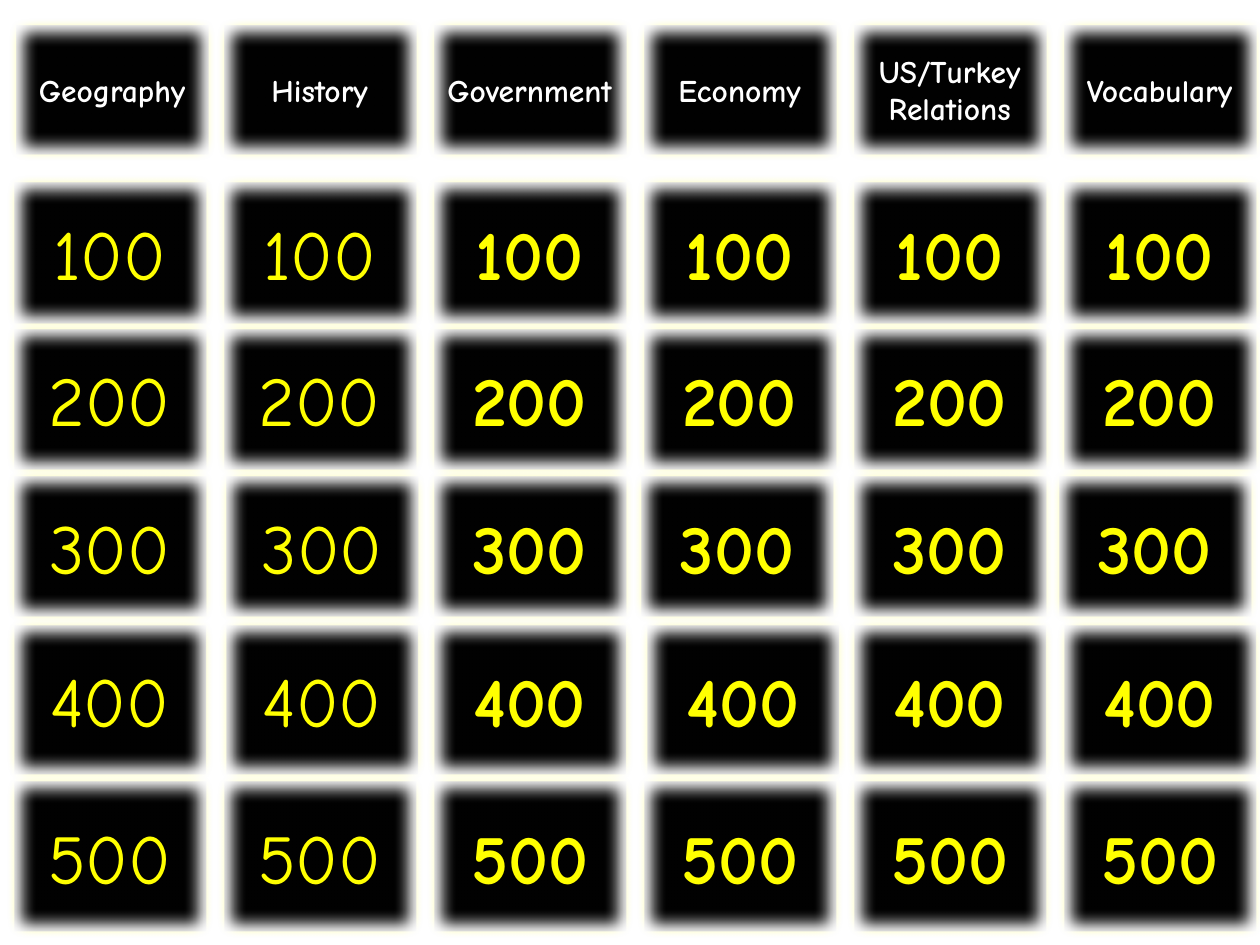
from lxml.etree import SubElement
from pptx import Presentation
from pptx.dml.color import RGBColor
from pptx.enum.shapes import MSO_SHAPE
from pptx.enum.text import MSO_ANCHOR, PP_ALIGN
from pptx.oxml.ns import qn
from pptx.util import Inches, Pt

BLACK, WHITE, YELLOW = "000000", "FFFFFF", "FFFF00"
FONT = "Comic Neue"
CATEGORIES = ["Geography", "History", "Government", "Economy",
              "US/Turkey\nRelations", "Vocabulary"]
LEFT, PITCH, TILE_WIDTH = 0.08, 5 / 3, 1.58
HEADER_TOP, HEADER_HEIGHT = 0.17, 1.08
VALUE_ROWS = {100: (1.42, 1.17), 200: (2.58, 1.17), 300: (3.75, 1.17),
              400: (4.93, 1.24), 500: (6.17, 1.25)}
NUDGES = {("Geography", 0): 0.02, ("History", 300): 0.02,
          ("History", 400): 0.02, ("Economy", 300): -0.02,
          ("Economy", 400): 0.03, ("Vocabulary", 300): -0.04}
THIN_COLUMNS = ("Geography", "History")


def color(hex_value):
    """Turn a hex string into a colour."""
    return RGBColor.from_string(hex_value)


def soften(tile, radius):
    """Replace the tile's shadow with a soft edge."""
    tile.shadow.inherit = False
    effects = tile._element.spPr.find(qn("a:effectLst"))
    SubElement(effects, qn("a:softEdge"), rad=str(int(radius)))


def write(tile, label, size, text_color, bold):
    """Write centred lines on a tile."""
    frame = tile.text_frame
    frame.word_wrap = False
    frame.vertical_anchor = MSO_ANCHOR.MIDDLE
    for index, line in enumerate(label.split("\n")):
        paragraph = frame.add_paragraph() if index else frame.paragraphs[0]
        paragraph.alignment = PP_ALIGN.CENTER
        run = paragraph.add_run()
        run.text = line
        run.font.name = FONT
        run.font.size = Pt(size)
        run.font.bold = bold
        run.font.color.rgb = color(text_color)


def add_tile(slide, left, top, height, label, size, text_color, bold):
    """Add one soft-edged button of the game board."""
    tile = slide.shapes.add_shape(
        MSO_SHAPE.ACTION_BUTTON_CUSTOM, Inches(left), Inches(top),
        Inches(TILE_WIDTH), Inches(height))
    tile.fill.solid()
    tile.fill.fore_color.rgb = color(BLACK)
    tile.line.color.rgb = color(YELLOW)
    tile.line.width = Pt(4.5)
    soften(tile, 112500)
    write(tile, label, size, text_color, bold)


def add_column(slide, column, category):
    """Add a category header and its point values."""
    def left(value):
        """Give the left edge of a tile in this column."""
        return LEFT + column * PITCH + NUDGES.get((category, value), 0)

    add_tile(slide, left(0), HEADER_TOP, HEADER_HEIGHT, category, 18, WHITE, True)
    for value, (top, height) in VALUE_ROWS.items():
        add_tile(slide, left(value), top, height, str(value), 40, YELLOW,
                 category not in THIN_COLUMNS)


def main():
    """Build the game board slide."""
    deck = Presentation()
    deck.slide_width, deck.slide_height = Inches(10), Inches(7.5)
    slide = deck.slides.add_slide(deck.slide_layouts[6])
    for column, category in enumerate(CATEGORIES):
        add_column(slide, column, category)
    deck.save("out.pptx")


if __name__ == "__main__":
    main()
